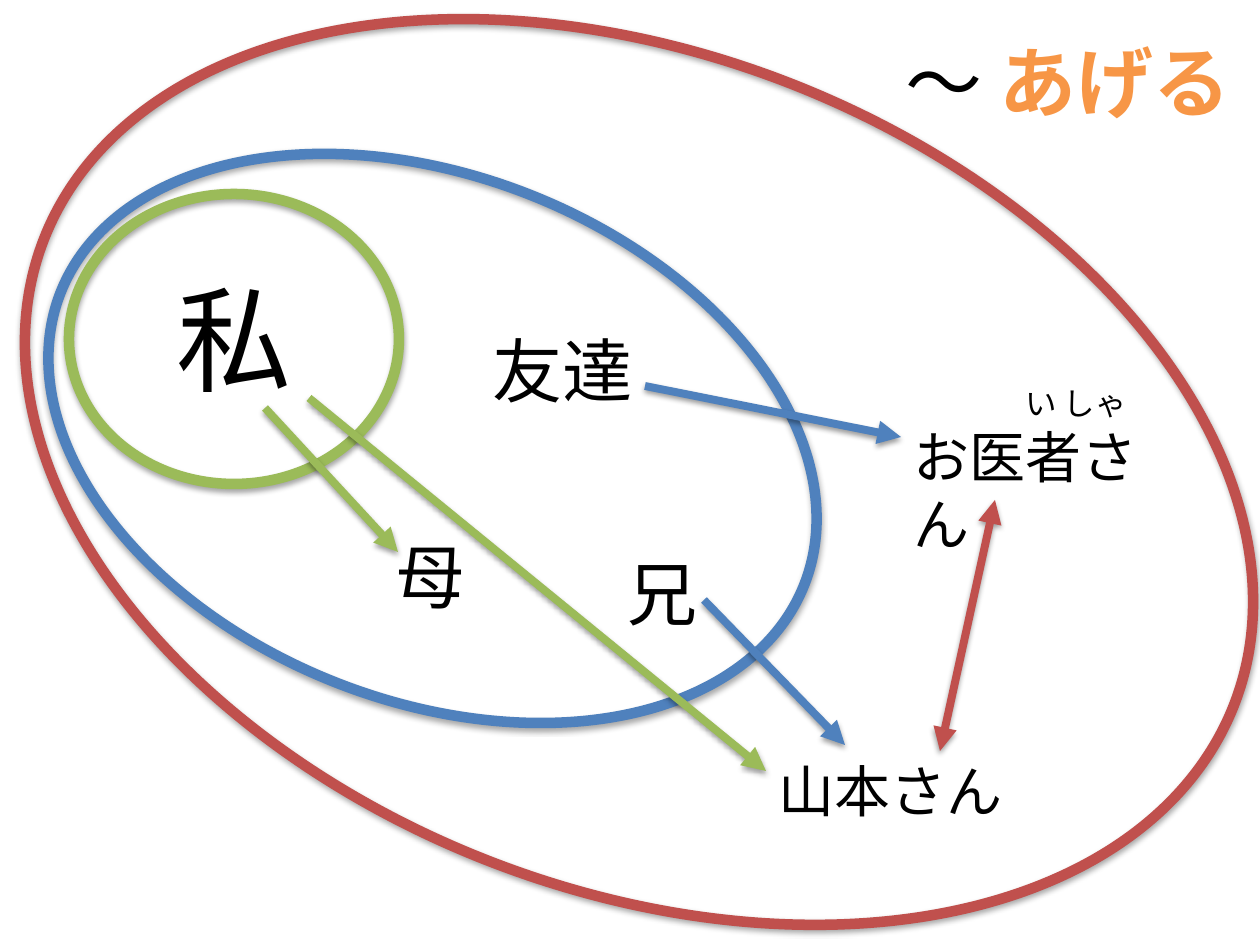
import pptx
import pptx.dml.color
import pptx.enum.shapes
import pptx.enum.text
import pptx.oxml
import pptx.oxml.ns
import pptx.util

PIXEL = 914400 / 126
FONT = "Calibri"
COLORS = {
    "text": "000000",
    "give": "F79646",
    "self": "9BBB59",
    "family": "4F81BD",
    "others": "C0504D",
}


def px(length):
    return pptx.util.Emu(round(length * PIXEL))


def rgb(name):
    return pptx.dml.color.RGBColor.from_string(COLORS[name])


def add_text(paragraph, text, size, color="text", bold=False):
    run = paragraph.add_run()
    run.text = text
    run.font.name = FONT
    run.font.size = pptx.util.Pt(size)
    run.font.bold = bold
    run.font.color.rgb = rgb(color)


class RelationSlide:
    ellipse_width = pptx.util.Pt(6)
    arrow_width = pptx.util.Pt(4.5)

    def __init__(self, presentation):
        self.slide = presentation.slides.add_slide(presentation.slide_layouts[5])

    def title(self, left, top, width, height, parts):
        shape = self.slide.shapes.title
        shape.left, shape.top, shape.width, shape.height = map(px, (left, top, width, height))
        frame = shape.text_frame
        frame.word_wrap = True
        frame.auto_size = pptx.enum.text.MSO_AUTO_SIZE.NONE
        frame.vertical_anchor = pptx.enum.text.MSO_ANCHOR.TOP
        paragraph = frame.paragraphs[0]
        paragraph.alignment = pptx.enum.text.PP_ALIGN.LEFT
        for text, style in parts:
            add_text(paragraph, text, **style)

    def shadow(self, shape, distance, opacity):
        properties = shape._element.spPr
        for effects in properties.findall(pptx.oxml.ns.qn("a:effectLst")):
            properties.remove(effects)
        properties.append(pptx.oxml.parse_xml(
            f'<a:effectLst {pptx.oxml.ns.nsdecls("a")}>'
            f'<a:outerShdw blurRad="40000" dist="{distance}" dir="5400000" rotWithShape="0">'
            f'<a:srgbClr val="{COLORS["text"]}"><a:alpha val="{opacity}000"/></a:srgbClr>'
            '</a:outerShdw></a:effectLst>'))

    def ellipse(self, left, top, width, height, color, rotation=0):
        shape = self.slide.shapes.add_shape(
            pptx.enum.shapes.MSO_SHAPE.OVAL, *map(px, (left, top, width, height)))
        shape.rotation = rotation
        shape.fill.background()
        shape.line.color.rgb = rgb(color)
        shape.line.width = self.ellipse_width
        self.shadow(shape, 23000, 35)

    def label(self, left, top, width, height, text, size, reading=None, indent=0):
        box = self.slide.shapes.add_textbox(*map(px, (left, top, width, height)))
        frame = box.text_frame
        frame.word_wrap = reading is not None
        paragraph = frame.paragraphs[0]
        if reading:
            add_text(paragraph, reading, 18)
            paragraph._p.get_or_add_pPr().set("marL", str(px(indent)))
            paragraph = frame.add_paragraph()
        add_text(paragraph, text, size)

    def arrow(self, start, end, color, both_ends=False):
        connector = self.slide.shapes.add_connector(
            pptx.enum.shapes.MSO_CONNECTOR.STRAIGHT, *map(px, (*start, *end)))
        connector.line.color.rgb = rgb(color)
        connector.line.width = self.arrow_width
        line = connector.line._get_or_add_ln()
        for tag in ("headEnd", "tailEnd") if both_ends else ("tailEnd",):
            line.append(pptx.oxml.parse_xml(
                f'<a:{tag} {pptx.oxml.ns.nsdecls("a")} type="triangle"/>'))
        self.shadow(connector, 20000, 38)


def main():
    presentation = pptx.Presentation()
    presentation.slide_width = px(1260)
    presentation.slide_height = px(945)
    page = RelationSlide(presentation)

    page.title(893, 28, 367, 106, [
        ("〜 ", {"size": 44}),
        ("あげる", {"size": 44, "color": "give", "bold": True}),
    ])

    page.ellipse(33, 176, 799, 525, "family", rotation=21.4)
    page.ellipse(69, 194, 330, 290, "self")
    page.ellipse(0, 55, 1278, 834, "others", rotation=21.4)

    page.label(164, 262, 142, 152, "私", 66)
    page.label(615, 544, 96, 97, "兄", 40)
    page.label(383, 527, 96, 97, "母", 40)
    page.label(480, 321, 166, 97, "友達", 40)
    page.label(766, 750, 252, 81, "山本さん", 32)
    page.label(901, 378, 302, 118, "お医者さん", 32, reading="い しゃ", indent=112)

    page.arrow((265, 408), (398, 552), "self")
    page.arrow((309, 398), (766, 771), "self")
    page.arrow((645, 386), (901, 437), "family")
    page.arrow((995, 500), (940, 751), "others", both_ends=True)
    page.arrow((704, 600), (845, 745), "family")

    presentation.save("out.pptx")


if __name__ == "__main__":
    main()
